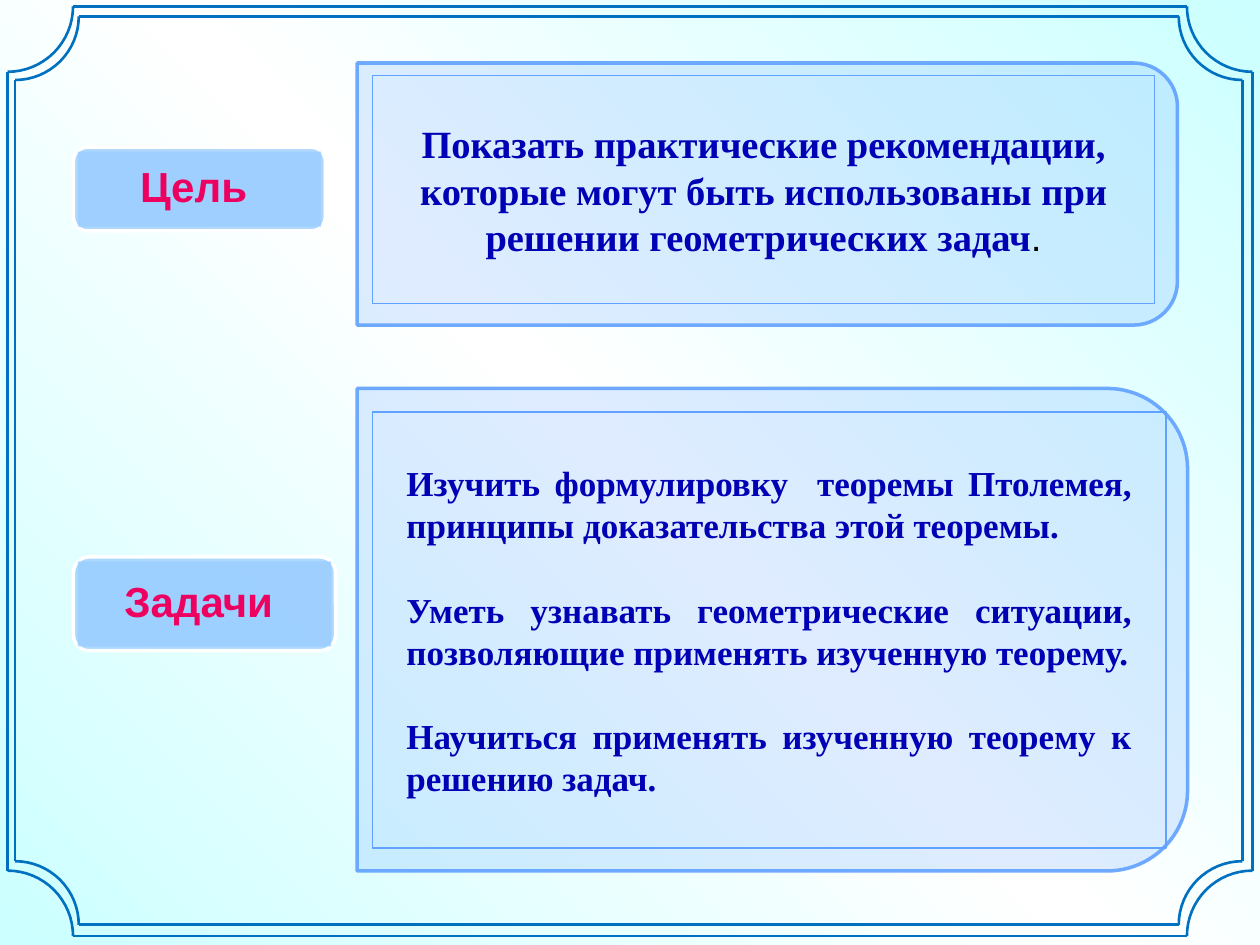
"""Build the slide that states the goal and the tasks of the lesson."""
import copy
import dataclasses
import math
import typing

import lxml.etree
import pptx
import pptx.dml.color
import pptx.enum.shapes
import pptx.enum.text
import pptx.oxml.ns
import pptx.util

Kind = pptx.enum.shapes.MSO_SHAPE
Align = pptx.enum.text.PP_ALIGN
qn = pptx.oxml.ns.qn


@dataclasses.dataclass(frozen=True)
class Theme:
    sky: str = "CCFFFF"
    white: str = "FFFFFF"
    frame: str = "0070C0"
    tag: str = "99CCFF"
    panel: str = "81B4FF"
    edge: str = "61A1FF"
    pink: str = "EE0060"
    navy: str = "0000B4"
    black: str = "000000"
    sans: str = "Arial"
    serif: str = "Times New Roman"
    label: float = 24
    goal: float = 22
    task: float = 20
    gap: float = 24


@dataclasses.dataclass(frozen=True)
class Box:
    """Place on a grid of 100 columns by 75 rows."""
    col: float
    row: float
    cols: float
    rows: float

    def inset(self, pad: float) -> "Box":
        return Box(self.col + pad, self.row + pad, self.cols - 2 * pad, self.rows - 2 * pad)

    def turn(self) -> "Box":
        shift = (self.cols - self.rows) / 2
        return Box(self.col + shift, self.row - shift, self.rows, self.cols)


class Run(typing.NamedTuple):
    text: str
    size: float
    font: str
    tint: str
    bold: bool = True


class Ring(typing.NamedTuple):
    box: Box
    notch: float


class Part(typing.NamedTuple):
    tag: Box
    label: str
    panel: Box
    inner: Box
    align: Align
    lines: list[list[Run]]


THEME = Theme()
COLS, ROWS, STEPS = 100, 75, 16
RINGS = [Ring(Box(0.6, 0.5, 98.8, 73.8), 5.2), Ring(Box(1.2, 1.3, 97.4, 72.1), 5.05)]
TASKS = [
    "Изучить формулировку  теоремы Птолемея, принципы доказательства этой теоремы.",
    "Уметь узнавать геометрические ситуации, позволяющие применять изученную теорему.",
    "Научиться применять изученную теорему к решению задач.",
]
GOAL = Part(
    Box(5.83, 11.68, 20, 6.65), "Цель ",
    Box(28.35, 5, 65.1, 20.8), Box(29.55, 6, 62.1, 18.1), Align.CENTER,
    [[Run("Показать практические рекомендации, которые могут быть использованы "
          "при решении геометрических задач", THEME.goal, THEME.serif, THEME.navy),
      Run(".", THEME.goal, THEME.sans, THEME.black, False)]])
WORK = Part(
    Box(5.83, 44.2, 20.8, 7.45), "Задачи ",
    Box(28.35, 30.83, 65.9, 38.3), Box(29.55, 32.7, 63, 34.6), Align.JUSTIFY,
    [[Run(task, THEME.task, THEME.serif, THEME.navy)] for task in TASKS])

deck = pptx.Presentation()
deck.slide_width, deck.slide_height = pptx.util.Inches(10), pptx.util.Inches(7.5)


def spot(col: float, row: float) -> tuple[int, int]:
    return round(col * deck.slide_width / COLS), round(row * deck.slide_height / ROWS)


def place(box: Box) -> tuple[int, ...]:
    return spot(box.col, box.row) + spot(box.cols, box.rows)


def hue(code: str) -> pptx.dml.color.RGBColor:
    return pptx.dml.color.RGBColor.from_string(code)


def paint(fill, code: str, root, share: int = 100) -> None:
    fill.solid()
    fill.fore_color.rgb = hue(code)
    if share < 100:
        node = root.find(qn("a:solidFill")).find(qn("a:srgbClr"))
        lxml.etree.SubElement(node, qn("a:alpha")).set("val", str(share * 1000))


def stroke(shape, code: str, width: float, share: int = 100) -> None:
    shape.line.width = pptx.util.Pt(width)
    paint(shape.line.fill, code, shape.line._get_or_add_ln(), share)


def draw(slide, kind: Kind, box: Box):
    shape = slide.shapes.add_shape(kind, *place(box))
    shape.shadow.inherit = False
    shape.fill.background()
    shape.line.fill.background()
    return shape


def hold(slide, holder, box: Box):
    holder.left, holder.top, holder.width, holder.height = place(box)
    slide.shapes.element.append(holder.element)
    return holder


def write(shape, lines: list[list[Run]], align: Align, pads: tuple[float, float],
          lead: float = 1.0, gap: float = 0) -> None:
    frame = shape.text_frame
    frame.word_wrap = True
    frame.auto_size = pptx.enum.text.MSO_AUTO_SIZE.NONE
    frame.vertical_anchor = pptx.enum.text.MSO_ANCHOR.MIDDLE
    frame.margin_left = frame.margin_right = pptx.util.Inches(pads[0])
    frame.margin_top = frame.margin_bottom = pptx.util.Inches(pads[1])
    for rank, line in enumerate(lines):
        para = frame.add_paragraph() if rank else frame.paragraphs[0]
        para.alignment, para.line_spacing = align, lead
        para.space_before = pptx.util.Pt(gap if rank else 0)
        props = para._p.get_or_add_pPr()
        props.set("marL", "0")
        props.set("indent", "0")
        lxml.etree.SubElement(props, qn("a:buNone"))
        for item in line:
            run = para.add_run()
            run.text = item.text
            run.font.size, run.font.name = pptx.util.Pt(item.size), item.font
            run.font.bold, run.font.color.rgb = item.bold, hue(item.tint)


def wash(slide) -> None:
    fill = slide.background.fill
    fill.gradient()
    fill.gradient_angle = 45
    stops = next(slide.element.iter(qn("a:gsLst")))
    stops.insert(1, copy.deepcopy(stops[0]))
    for rank, code in enumerate((THEME.sky, THEME.white, THEME.sky)):
        stop = fill.gradient_stops[rank]
        stop.position, stop.color.rgb = rank / 2, hue(code)


def side(slide, start: tuple[float, float], end: tuple[float, float]) -> None:
    kind = pptx.enum.shapes.MSO_CONNECTOR.STRAIGHT
    line = slide.shapes.add_connector(kind, *spot(*start), *spot(*end))
    stroke(line, THEME.frame, 1.5)
    lxml.etree.SubElement(line.element.spPr, qn("a:effectLst"))


def corner(slide, col: float, row: float, across: float, down: float) -> None:
    turns = [math.pi / 2 * step / STEPS for step in range(STEPS + 1)]
    dots = [spot(col + across * math.cos(t), row + down * math.sin(t)) for t in turns]
    pen = slide.shapes.build_freeform(*dots[0])
    pen.add_line_segments(dots[1:], close=False)
    arc = pen.convert_to_shape()
    arc.shadow.inherit = False
    arc.fill.background()
    stroke(arc, THEME.frame, 1.5)


def border(slide, ring: Ring) -> None:
    box, cut = ring
    left, top, right, low = box.col, box.row, box.col + box.cols, box.row + box.rows
    for row, down in ((top, cut), (low, -cut)):
        side(slide, (left + cut, row), (right - cut, row))
        for col, across in ((left, cut), (right, -cut)):
            corner(slide, col, row, across, down)
    for col in (left, right):
        side(slide, (col, top + cut), (col, low - cut))


def build(slide, part: Part, title=None, body=None) -> None:
    back = draw(slide, Kind.ROUNDED_RECTANGLE, part.tag)
    paint(back.fill, THEME.tag, back.element.spPr, 75)
    stroke(back, THEME.white, 2)
    core = part.tag.inset(0.35)
    label = hold(slide, title, core) if title else draw(slide, Kind.RECTANGLE, core)
    paint(label.fill, THEME.tag, label.element.spPr, 75)
    write(label, [[Run(part.label, THEME.label, THEME.sans, THEME.pink)]],
          Align.CENTER, (0.07, 0.04), 0.9)
    panel = draw(slide, Kind.ROUND_2_SAME_RECTANGLE, part.panel.turn())
    panel.rotation = 90
    paint(panel.fill, THEME.panel, panel.element.spPr, 25)
    stroke(panel, THEME.edge, 2, 90)
    text = hold(slide, body, part.inner) if body else draw(slide, Kind.RECTANGLE, part.inner)
    stroke(text, THEME.edge, 0.75)
    write(text, part.lines, part.align, (0.27, 0.14), gap=THEME.gap)


def main() -> None:
    slide = deck.slides.add_slide(deck.slide_layouts[1])
    title, body = slide.placeholders
    wash(slide)
    for ring in RINGS:
        border(slide, ring)
    build(slide, GOAL, title=title)
    build(slide, WORK, body=body)
    deck.save("out.pptx")


if __name__ == "__main__":
    main()
